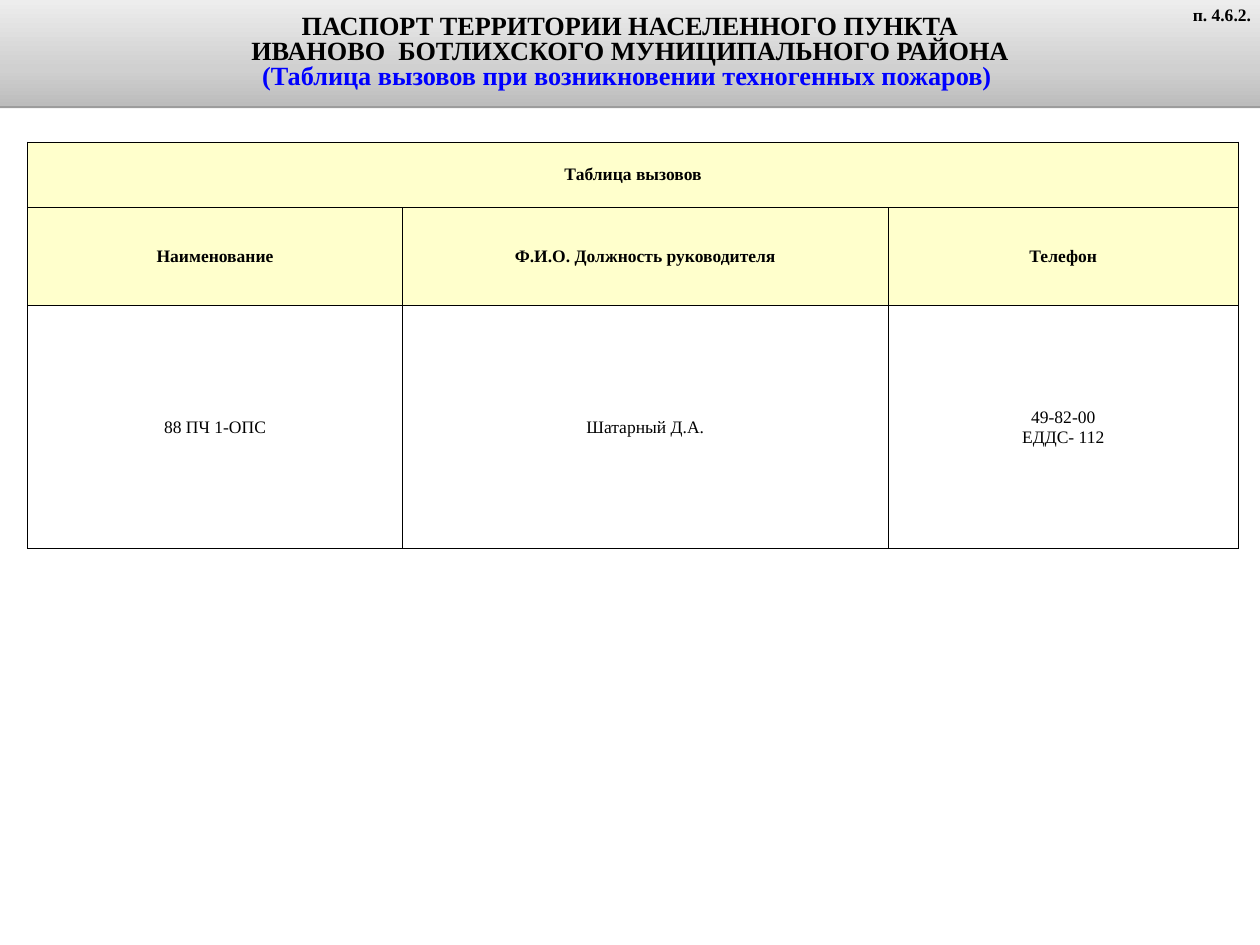
from copy import deepcopy

from lxml.etree import SubElement
from pptx import Presentation
from pptx.dml.color import RGBColor
from pptx.enum.shapes import MSO_SHAPE
from pptx.enum.text import MSO_ANCHOR, MSO_AUTO_SIZE, PP_ALIGN
from pptx.oxml import parse_xml
from pptx.oxml.ns import nsdecls, qn
from pptx.util import Inches, Pt

BLACK = RGBColor(0x00, 0x00, 0x00)
WHITE = RGBColor(0xFF, 0xFF, 0xFF)
BLUE = RGBColor(0x00, 0x00, 0xFF)
CREAM = RGBColor(0xFF, 0xFF, 0xCC)
GRAY_DARK = RGBColor(0xBC, 0xBC, 0xBC)
GRAY_MID = RGBColor(0xD0, 0xD0, 0xD0)
GRAY_LIGHT = RGBColor(0xED, 0xED, 0xED)


class SlideBuilder:
    font = "Times New Roman"
    title_size = Pt(21)
    body_size = Pt(14)
    cell_margin = Inches(0.03)
    border = Pt(1)

    def __init__(self, slide):
        self.s = slide

    def add_lines(self, tf, lines, size, align, bold=True, spacing=None):
        for i, (text, color) in enumerate(lines):
            p = tf.add_paragraph() if i else tf.paragraphs[0]
            p.alignment = align
            if spacing:
                p.line_spacing = spacing
            r = p.add_run()
            r.text = text
            r.font.name = self.font
            r.font.size = size
            r.font.bold = bold
            r.font.color.rgb = color

    def banner(self, x, y, w, h, lines):
        sp = self.s.shapes.add_shape(
            MSO_SHAPE.RECTANGLE, Inches(x), Inches(y), Inches(w), Inches(h))
        sp.line.fill.background()
        sp.fill.gradient()
        sp.fill.gradient_angle = 90
        stops = sp._element.spPr.find(qn("a:gradFill")).find(qn("a:gsLst"))
        stops.insert(1, deepcopy(stops[0]))
        shades = ((0, GRAY_DARK), (0.35, GRAY_MID), (1, GRAY_LIGHT))
        for stop, (position, color) in zip(sp.fill.gradient_stops, shades):
            stop.position = position
            stop.color.rgb = color
        sp.shadow.inherit = False
        sp._element.spPr.find(qn("a:effectLst")).append(parse_xml(
            f'<a:outerShdw {nsdecls("a")} blurRad="0" dist="{Pt(1.6)}" '
            'dir="5400000" rotWithShape="0"><a:srgbClr val="000000">'
            '<a:alpha val="38000"/></a:srgbClr></a:outerShdw>'))
        tf = sp.text_frame
        tf.word_wrap = True
        tf.vertical_anchor = MSO_ANCHOR.MIDDLE
        self.add_lines(tf, lines, self.title_size, PP_ALIGN.CENTER, spacing=0.8)

    def label(self, x, y, w, h, text):
        tf = self.s.shapes.add_textbox(
            Inches(x), Inches(y), Inches(w), Inches(h)).text_frame
        tf.word_wrap = True
        tf.auto_size = MSO_AUTO_SIZE.SHAPE_TO_FIT_TEXT
        self.add_lines(tf, [(text, BLACK)], self.body_size, PP_ALIGN.RIGHT)

    def cell(self, cell, text, fill, bold):
        cell.margin_left = cell.margin_right = self.cell_margin
        cell.margin_top = cell.margin_bottom = self.cell_margin
        cell.vertical_anchor = MSO_ANCHOR.MIDDLE
        tcPr = cell._tc.get_or_add_tcPr()
        for side in ("a:lnL", "a:lnR", "a:lnT", "a:lnB"):
            ln = SubElement(tcPr, qn(side), w=str(self.border))
            solid = SubElement(ln, qn("a:solidFill"))
            SubElement(solid, qn("a:srgbClr"), val=str(BLACK))
        cell.fill.solid()
        cell.fill.fore_color.rgb = fill
        if text:
            lines = [(line, BLACK) for line in text.split("\n")]
            self.add_lines(cell.text_frame, lines, self.body_size,
                           PP_ALIGN.CENTER, bold)

    def table(self, x, y, widths, heights, rows, header_rows):
        table = self.s.shapes.add_table(
            len(heights), len(widths), Inches(x), Inches(y),
            Inches(sum(widths)), Inches(sum(heights))).table
        for column, width in zip(table.columns, widths):
            column.width = Inches(width)
        for i, (height, texts) in enumerate(zip(heights, rows)):
            table.rows[i].height = Inches(height)
            header = i < header_rows
            for j, text in enumerate(texts):
                self.cell(table.cell(i, j), text,
                          CREAM if header else WHITE, header)
        table.cell(0, 0).merge(table.cell(0, len(widths) - 1))


def main():
    prs = Presentation()
    prs.slide_width = Inches(14)
    prs.slide_height = Inches(10.5)
    builder = SlideBuilder(prs.slides.add_slide(prs.slide_layouts[6]))
    builder.banner(0, 0, 14, 1.18, [
        ("ПАСПОРТ ТЕРРИТОРИИ НАСЕЛЕННОГО ПУНКТА", BLACK),
        ("ИВАНОВО  БОТЛИХСКОГО МУНИЦИПАЛЬНОГО РАЙОНА", BLACK),
        ("(Таблица вызовов при возникновении техногенных пожаров) ", BLUE),
    ])
    builder.table(0.31, 1.58, (4.16, 5.4, 3.89), (0.73, 1.09, 2.7), [
        ("Таблица вызовов", "", ""),
        ("Наименование", "Ф.И.О. Должность руководителя", "Телефон"),
        ("88 ПЧ 1-ОПС", "Шатарный Д.А.", "49-82-00\nЕДДС- 112"),
    ], header_rows=2)
    builder.label(13.06, 0, 0.94, 0.33, "п. 4.6.2.")
    prs.save("out.pptx")


if __name__ == "__main__":
    main()
